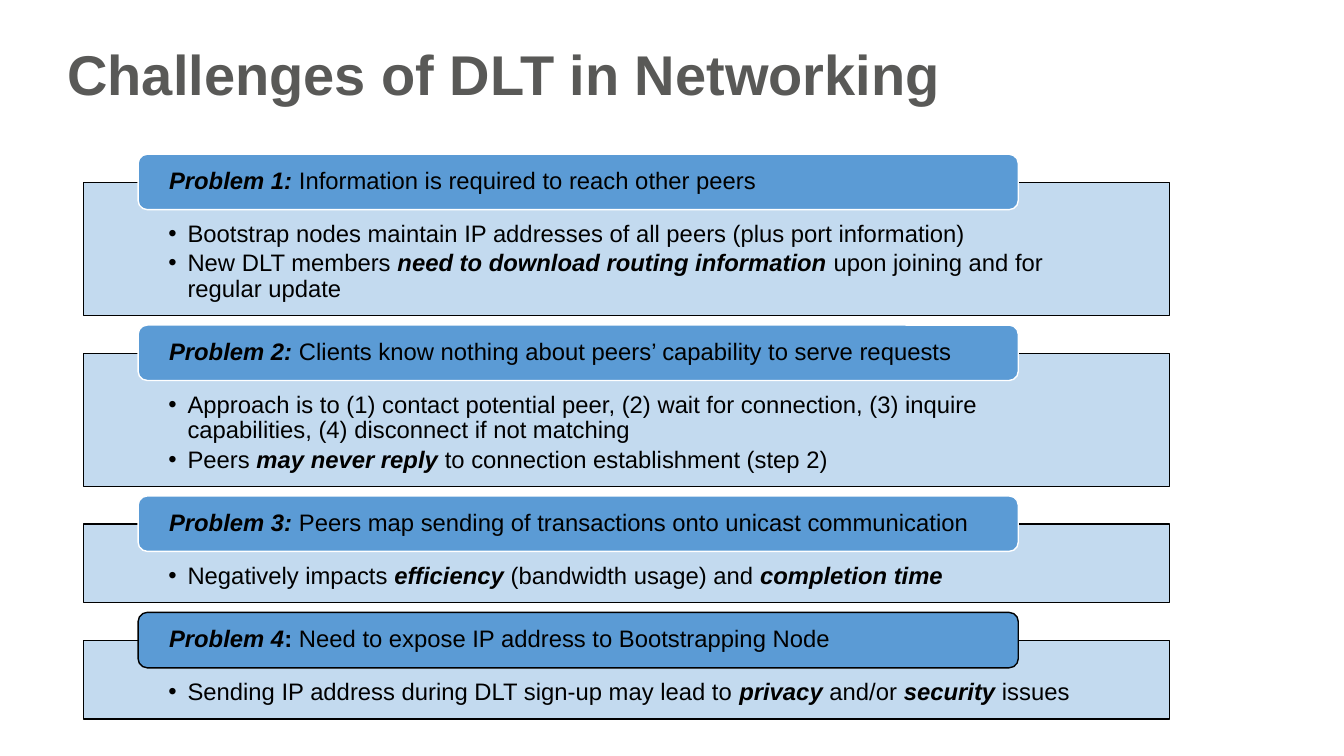
from lxml import etree
from pptx import Presentation
from pptx.dml.color import RGBColor
from pptx.enum.shapes import MSO_SHAPE
from pptx.enum.text import MSO_ANCHOR, PP_ALIGN
from pptx.oxml.ns import qn
from pptx.util import Inches, Pt

RECTANGLE, ROUNDED = MSO_SHAPE.RECTANGLE, MSO_SHAPE.ROUNDED_RECTANGLE
TOP, MIDDLE, BOTTOM = MSO_ANCHOR.TOP, MSO_ANCHOR.MIDDLE, MSO_ANCHOR.BOTTOM
LEFT = PP_ALIGN.LEFT

# Content: a paragraph is a list of (text, style), where b is bold and i is italic
TITLE = [("Challenges of DLT in Networking", "b")]
PROBLEMS = [
    {"heading": [("Problem 1: ", "bi"), ("Information is required to reach other peers", "")],
     "bullets": [
         [("Bootstrap nodes maintain IP addresses of all peers (plus port information)", "")],
         [("New DLT members ", ""), ("need to download routing information ", "bi"),
          ("upon joining and for regular update", "")]],
     "height": 1.32, "outline": "FFFFFF"},
    {"heading": [("Problem 2: ", "bi"),
                 ("Clients know nothing about peers’ capability to serve requests", "")],
     "bullets": [
         [("Approach is to (1) contact potential peer, (2) wait for connection, "
           "(3) inquire capabilities, (4) disconnect if not matching", "")],
         [("Peers ", ""), ("may never reply ", "bi"),
          ("to connection establishment (step 2)", "")]],
     "height": 1.32, "outline": "FFFFFF"},
    {"heading": [("Problem 3: ", "bi"),
                 ("Peers map sending of transactions onto unicast communication", "")],
     "bullets": [
         [("Negatively impacts ", ""), ("efficiency", "bi"),
          (" (bandwidth usage) and ", ""), ("completion time", "bi")]],
     "height": 0.78, "outline": "FFFFFF"},
    {"heading": [("Problem 4", "bi"), (":", "b"),
                 (" Need to expose IP address to Bootstrapping Node", "")],
     "bullets": [
         [("Sending IP address during DLT sign-up may lead to ", ""), ("privacy", "bi"),
          (" and/or ", ""), ("security", "bi"), (" issues", "")]],
     "height": 0.78, "outline": "000000"},
]

# Layout in inches
PANEL_LEFT, PANEL_WIDTH, FIRST_TOP, GAP = 0.83, 10.77, 1.81, 0.375
TAB_LEFT, TAB_WIDTH, TAB_HEIGHT, TAB_RISE = 1.37, 8.73, 0.55, 0.28


def color(value):
    return RGBColor.from_string(value)


def add_bullet(paragraph, indent=0.19):
    properties = paragraph._p.get_or_add_pPr()
    properties.set("marL", str(Inches(indent)))
    properties.set("indent", str(-Inches(indent)))
    etree.SubElement(properties, qn("a:buFont")).set("typeface", "Arial")
    etree.SubElement(properties, qn("a:buChar")).set("char", "•")


def write_text(shape, paragraphs, size=17, ink="000000", anchor=TOP,
               insets=(0.1, 0.05, 0.1, 0.05), space_after=0, bulleted=False):
    frame = shape.text_frame
    frame.word_wrap = True
    frame.vertical_anchor = anchor
    (frame.margin_left, frame.margin_top,
     frame.margin_right, frame.margin_bottom) = map(Inches, insets)
    for index, runs in enumerate(paragraphs):
        paragraph = frame.add_paragraph() if index else frame.paragraphs[0]
        paragraph.alignment = LEFT
        paragraph.line_spacing = 0.9
        paragraph.space_after = Pt(space_after)
        if bulleted:
            add_bullet(paragraph)
        for text, style in runs:
            run = paragraph.add_run()
            run.text = text
            run.font.name = "Arial"
            run.font.size = Pt(size)
            run.font.bold = "b" in style
            run.font.italic = "i" in style
            run.font.color.rgb = color(ink)


def add_box(slide, kind, left, top, width, height, fill, outline, opacity=100):
    shape = slide.shapes.add_shape(kind, *map(Inches, (left, top, width, height)))
    shape.shadow.inherit = False
    shape.fill.solid()
    shape.fill.fore_color.rgb = color(fill)
    if opacity < 100:
        fill_color = shape._element.spPr.find(qn("a:solidFill"))[0]
        etree.SubElement(fill_color, qn("a:alpha")).set("val", str(opacity * 1000))
    shape.line.color.rgb = color(outline)
    shape.line.width = Pt(1)
    return shape


def main():
    presentation = Presentation()
    presentation.slide_width, presentation.slide_height = Inches(13.33), Inches(7.5)
    slide = presentation.slides.add_slide(presentation.slide_layouts[6])

    # Title
    title = slide.shapes.add_textbox(*map(Inches, (0.57, 0.29, 11.5, 0.83)))
    write_text(title, [TITLE], size=40, ink="595957", anchor=BOTTOM)

    # Problems: a panel of bullets with a heading tab across its upper edge
    top = FIRST_TOP
    for problem in PROBLEMS:
        panel = add_box(slide, RECTANGLE, PANEL_LEFT, top, PANEL_WIDTH, problem["height"],
                        "BDD7EE", "000000", opacity=90)
        write_text(panel, problem["bullets"], insets=(0.84, 0.39, 0.84, 0.13),
                   space_after=2.5, bulleted=True)
        tab = add_box(slide, ROUNDED, TAB_LEFT, top - TAB_RISE, TAB_WIDTH, TAB_HEIGHT,
                      "5B9BD5", problem["outline"])
        write_text(tab, [problem["heading"]], anchor=MIDDLE, insets=(0.28, 0, 0.28, 0))
        top += problem["height"] + GAP

    presentation.save("out.pptx")


if __name__ == "__main__":
    main()
